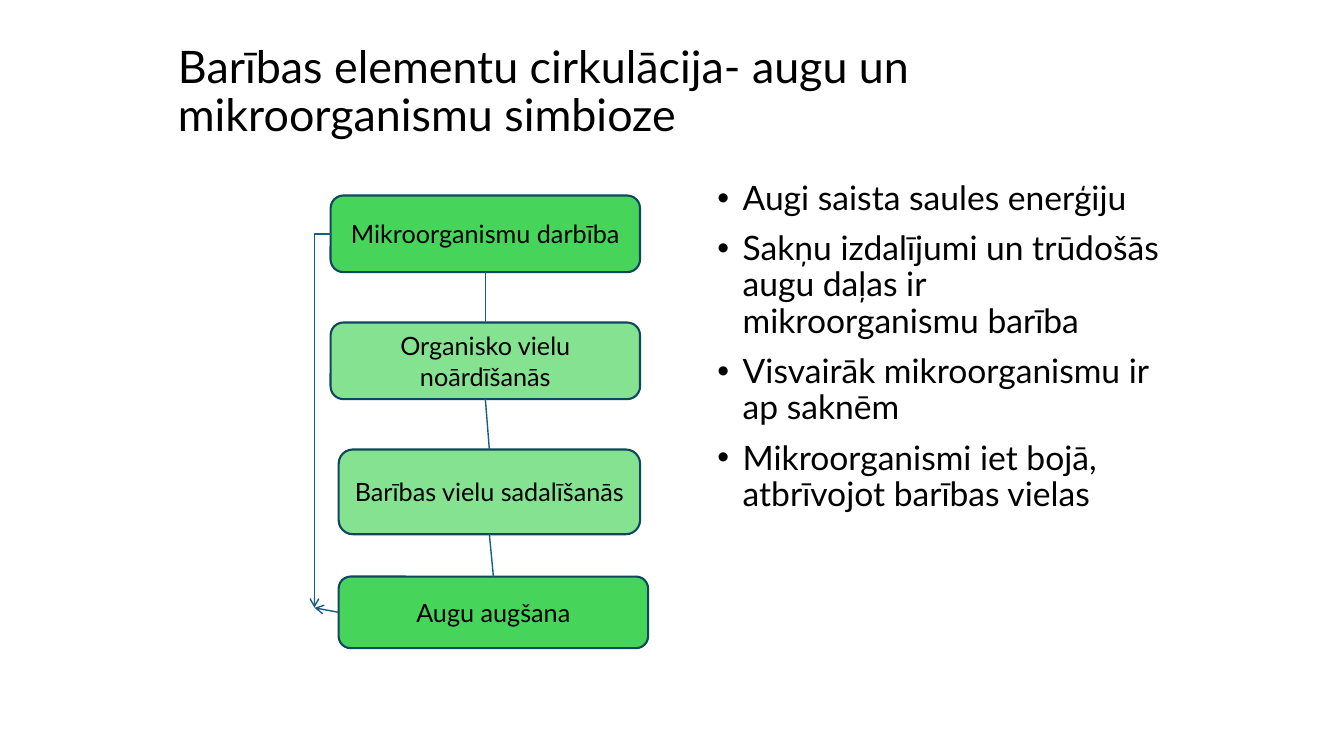
from lxml.etree import SubElement
from pptx import Presentation
from pptx.dml.color import RGBColor as Rgb
from pptx.enum.shapes import MSO_CONNECTOR as Link, MSO_SHAPE as Shape
from pptx.enum.text import MSO_ANCHOR as Anchor, PP_ALIGN as Align
from pptx.oxml.ns import qn
from pptx.util import Inches, Pt

COLORS = {"text": "000000", "living": "47D45A", "matter": "84E291",
          "border": "104760", "link": "156082"}
FONT = "Lato"
COLUMNS, ROWS = 80, 45
TOP, LEFT, BOTTOM = 0, 1, 2  # connection sites of a box


def color(name):
    return Rgb.from_string(COLORS[name])


def write(frame, lines, size=18, align=Align.LEFT, anchor=Anchor.TOP,
          spacing=1.0, gap=0, bullet=None):
    """Fill a text frame with one paragraph per line."""
    frame.word_wrap = True
    frame.vertical_anchor = anchor
    for index, line in enumerate(lines):
        para = frame.add_paragraph() if index else frame.paragraphs[0]
        if bullet:
            props = para._p.get_or_add_pPr()
            props.set("marL", str(Inches(0.25)))
            props.set("indent", str(-Inches(0.25)))
            SubElement(props, qn("a:buFont"), typeface="Arial")
            SubElement(props, qn("a:buChar"), char=bullet)
        para.alignment = align
        para.line_spacing = spacing
        para.space_before = Pt(gap if index else 0)
        span = para.add_run()
        span.text = line
        span.font.name = FONT
        span.font.size = Pt(size)
        span.font.color.rgb = color("text")


class Board:
    """The current slide with its grid of columns and rows."""

    def __init__(self, deck):
        self.page = deck.slides.add_slide(deck.slide_layouts[6])
        self.column = deck.slide_width / COLUMNS
        self.row = deck.slide_height / ROWS

    def grid(self, *cells):
        """Turn column, row pairs into slide lengths."""
        return [round(cell * (self.row if index % 2 else self.column))
                for index, cell in enumerate(cells)]

    def text(self, area, lines, **style):
        box = self.page.shapes.add_textbox(*self.grid(*area))
        write(box.text_frame, lines, **style)

    def box(self, area, label, fill):
        box = self.page.shapes.add_shape(Shape.ROUNDED_RECTANGLE, *self.grid(*area))
        box.shadow.inherit = False
        box.fill.solid()
        box.fill.fore_color.rgb = color(fill)
        box.line.color.rgb = color("border")
        box.line.width = Pt(1.5)
        write(box.text_frame, [label], align=Align.CENTER, anchor=Anchor.MIDDLE)
        return box

    def link(self, start, site, end, end_site=None, bent=False, arrow=False):
        """Join a box to another box, or to a (column, row) point."""
        kind = Link.ELBOW if bent else Link.STRAIGHT
        target = self.grid(*end) if end_site is None else (0, 0)
        line = self.page.shapes.add_connector(kind, 0, 0, *target)
        line.begin_connect(start, site)
        if end_site is not None:
            line.end_connect(end, end_site)
        line.line.color.rgb = color("link")
        line.line.width = Pt(1)
        props = line._element.spPr
        if bent:
            props.find(qn("a:prstGeom")).set("prst", "bentConnector2")
        if arrow:
            SubElement(props.find(qn("a:ln")), qn("a:tailEnd"), type="arrow")
        SubElement(props, qn("a:effectLst"))


def main():
    deck = Presentation()
    deck.slide_width, deck.slide_height = Inches(13.33), Inches(7.5)
    board = Board(deck)

    # Title and bullet list
    board.text((10, 1.8, 54, 7.5),
               ["Barības elementu cirkulācija- augu un mikroorganismu simbioze"],
               size=32, anchor=Anchor.MIDDLE, spacing=0.9)
    board.text((42.12, 10.5, 27.9, 29.7),
               ["Augi saista saules enerģiju",
                "Sakņu izdalījumi un trūdošās augu daļas ir mikroorganismu barība",
                "Visvairāk mikroorganismu ir ap saknēm",
                "Mikroorganismi iet bojā, atbrīvojot barības vielas"],
               size=24, spacing=0.9, gap=10, bullet="•")

    # Cycle stages, evenly stepped down the page
    stages = [("Mikroorganismu darbība", "living", 19.68, 18.42, 4.56),
              ("Organisko vielu noārdīšanās", "matter", 19.68, 18.42, 4.56),
              ("Barības vielu sadalīšanās", "matter", 20.16, 17.94, 5.04),
              ("Augu augšana", "living", 20.16, 18.42, 4.26)]
    first_row, step = 11.64, 7.56
    boxes = [board.box((left, first_row + step * index, width, height), label, fill)
             for index, (label, fill, left, width, height) in enumerate(stages)]

    # Links down the stages, then the loop on the left
    for upper, lower in zip(boxes, boxes[1:]):
        board.link(upper, BOTTOM, lower, TOP)
    meeting = (18.72, 36.18)
    board.link(boxes[0], LEFT, meeting, bent=True, arrow=True)
    board.link(boxes[-1], LEFT, meeting, arrow=True)

    deck.save("out.pptx")


if __name__ == "__main__":
    main()
